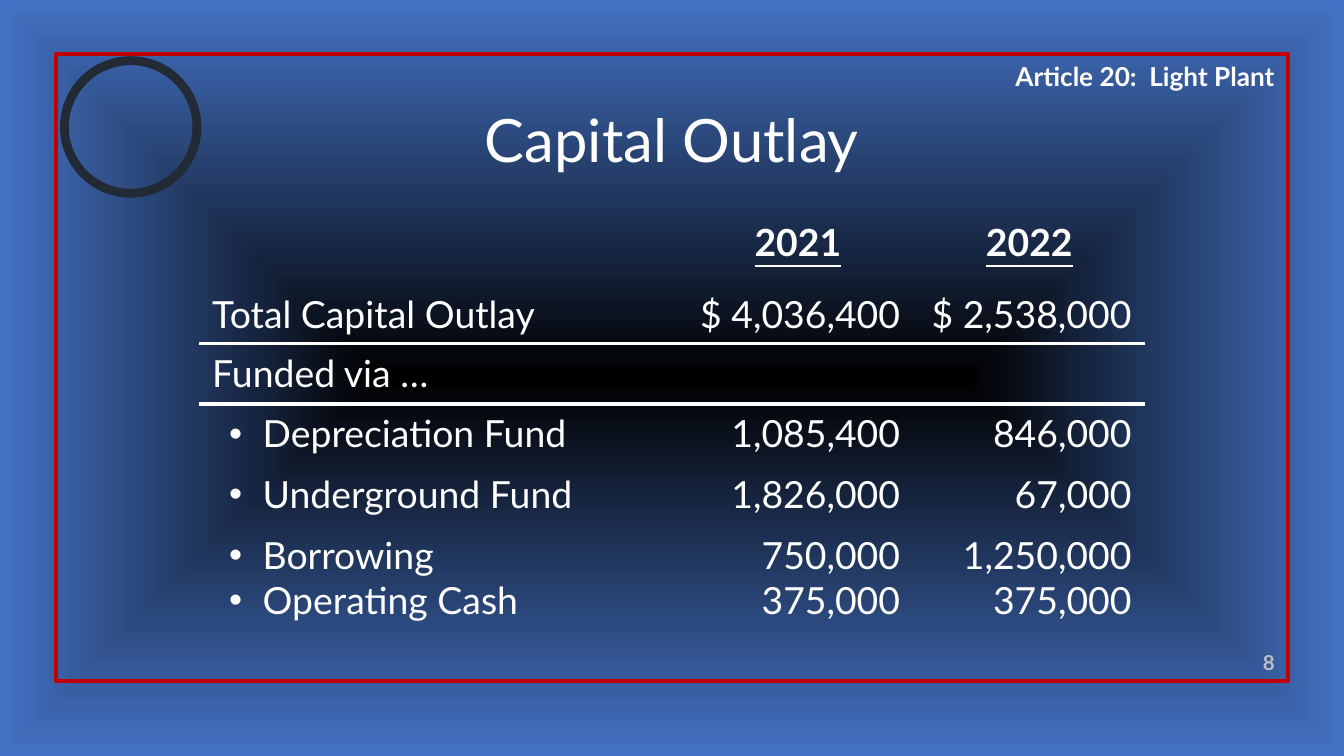
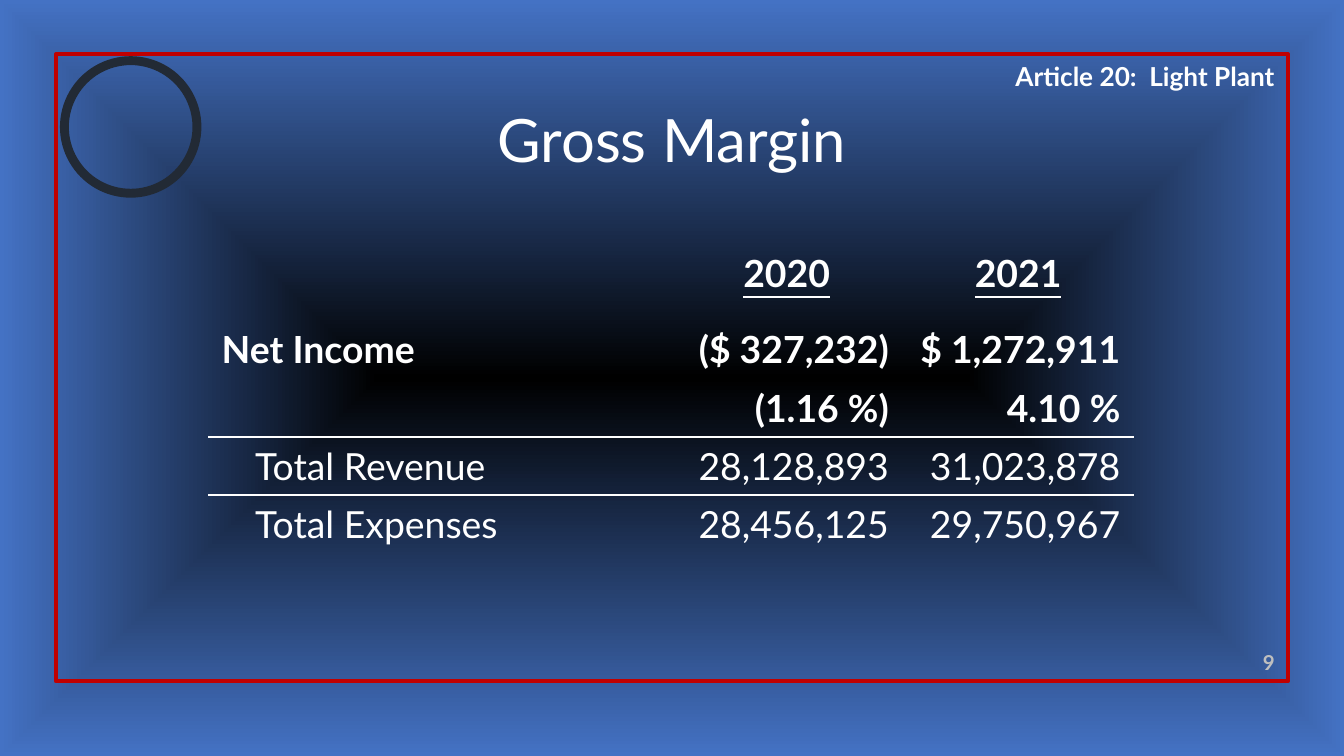
from lxml import etree
from pptx import Presentation
from pptx.dml.color import RGBColor
from pptx.enum.shapes import MSO_SHAPE
from pptx.enum.text import MSO_ANCHOR, MSO_AUTO_SIZE, PP_ALIGN
from pptx.oxml import parse_xml
from pptx.oxml.ns import qn
from pptx.util import Pt

LEFT, MID, RIGHT = PP_ALIGN.LEFT, PP_ALIGN.CENTER, PP_ALIGN.RIGHT
TOP, CENTRE, BOTTOM = MSO_ANCHOR.TOP, MSO_ANCHOR.MIDDLE, MSO_ANCHOR.BOTTOM
RECT, OVAL = MSO_SHAPE.RECTANGLE, MSO_SHAPE.OVAL
GROW = MSO_AUTO_SIZE.SHAPE_TO_FIT_TEXT
FONT = "Lato"
NS = "http://schemas.openxmlformats.org/drawingml/2006/main"
NO_GRID = "{2D5ABB26-0587-4C30-8999-92F81FD0307C}"
COLORS = {
    "white": "FFFFFF", "red": "C00000", "ring": "222A35", "grey": "BFBFBF",
    "black": "000000", "blue": "4472C4", "slate": "44546A",
}

PAGES = [
    {
        "title": "Capital Outlay", "page": 8,
        "at": (106.5, 114), "cols": (259, 124, 124),
        "rows": (32.5, 37.5, 32.5, 32.5, 32.5, 57),
        "bold": (0,), "rule": 1, "width": 2.25,
        "indent": 27, "hang": -18, "bullet": "•",
        "cells": [
            ("", "2021", "2022"),
            ("Total Capital Outlay", "$ 4,036,400", "$ 2,538,000"),
            ("Funded via …", "", ""),
            ("Depreciation Fund", "1,085,400", "846,000"),
            ("Underground Fund", "1,826,000", "67,000"),
            ("Borrowing\nOperating Cash", "750,000\n375,000", "1,250,000\n375,000"),
        ],
    },
    {
        "title": "Gross Margin", "page": 9,
        "at": (111.5, 130.5), "cols": (248, 124, 124),
        "rows": (29.5, 41, 29.5, 29.5, 29.5),
        "bold": (0, 1, 2), "rule": 2, "width": 1,
        "indent": 18, "hang": 0, "bullet": "",
        "cells": [
            ("", "2020", "2021"),
            ("Net Income", "($ 327,232)", "$ 1,272,911"),
            ("", "(1.16 %)", "4.10 %"),
            ("Total Revenue", "28,128,893", "31,023,878"),
            ("Total Expenses", "28,456,125", "29,750,967"),
        ],
    },
]


def write(frame, text, size=20, color="white", bold=False, under=False,
          align=LEFT, indent=0, hang=0, bullet=""):
    """Fill a text frame, one paragraph for each line of text."""
    for i, line in enumerate(text.split("\n")):
        para = frame.paragraphs[0] if i == 0 else frame.add_paragraph()
        para.alignment = align
        if indent:
            props = para._p.get_or_add_pPr()
            props.set("marL", str(Pt(indent)))
            props.set("indent", str(Pt(hang)))
            if bullet:
                etree.SubElement(props, qn("a:buFont")).set("typeface", "Arial")
                etree.SubElement(props, qn("a:buChar")).set("char", bullet)
        run = para.add_run()
        run.text = line
        font = run.font
        font.name, font.size = FONT, Pt(size)
        font.bold, font.underline = bold, under
        font.color.rgb = RGBColor.from_string(COLORS[color])


def border(cell, side, width):
    props = cell._tc.get_or_add_tcPr()
    props.insert(0, parse_xml(
        f'<a:{side} xmlns:a="{NS}" w="{Pt(width)}"><a:solidFill>'
        f'<a:srgbClr val="{COLORS["white"]}"/></a:solidFill></a:{side}>'))


deck = Presentation()
deck.slide_width, deck.slide_height = Pt(720), Pt(405)

# Shared background
master = deck.slide_master
master.background.fill.gradient()
old = master.element.find(".//" + qn("p:bgPr")).find(qn("a:gradFill"))
stops = "".join(
    f'<a:gs pos="{pos}"><a:srgbClr val="{COLORS[name]}"/></a:gs>'
    for pos, name in ((0, "black"), (100000, "blue"), (100000, "slate")))
old.getparent().replace(old, parse_xml(
    f'<a:gradFill xmlns:a="{NS}" rotWithShape="1"><a:gsLst>{stops}</a:gsLst>'
    '<a:path path="shape"><a:fillToRect l="50000" t="50000" r="50000" b="50000"/>'
    '</a:path></a:gradFill>'))

for page in PAGES:
    slide = deck.slides.add_slide(deck.slide_layouts[5])
    shapes = slide.shapes

    # Frame and ring
    for kind, box, color, width in (
            (RECT, (30, 29, 660, 336), "red", 2.25),
            (OVAL, (34.5, 32.5, 71, 71), "ring", 4.75)):
        shape = shapes.add_shape(kind, *map(Pt, box))
        shape.shadow.inherit = False
        shape.fill.background()
        shape.line.color.rgb = RGBColor.from_string(COLORS[color])
        shape.line.width = Pt(width)

    # Article label and page number
    label = shapes.add_textbox(Pt(498), Pt(29), Pt(192), Pt(24)).text_frame
    label.word_wrap, label.auto_size = True, GROW
    write(label, "Article 20:  Light Plant", size=14, bold=True, align=RIGHT)
    number = shapes.add_textbox(Pt(648), Pt(348), Pt(42), Pt(17)).text_frame
    number.word_wrap, number.vertical_anchor = True, BOTTOM
    write(number, str(page["page"]), size=11, color="grey", bold=True, align=RIGHT)

    title = shapes.title
    title.left, title.top, title.width, title.height = map(Pt, (36, 47, 648, 54))
    title.text_frame.vertical_anchor = CENTRE
    write(title.text_frame, page["title"], size=32, align=MID)

    # Table
    cols, rows, rule = page["cols"], page["rows"], page["rule"]
    box = (*page["at"], sum(cols), sum(rows))
    table = shapes.add_table(len(rows), len(cols), *map(Pt, box)).table
    table.first_row = table.horz_banding = False
    table._tbl.tblPr.find(qn("a:tableStyleId")).text = NO_GRID
    for col, width in zip(table.columns, cols):
        col.width = Pt(width)
    for r, texts in enumerate(page["cells"]):
        table.rows[r].height = Pt(rows[r])
        for c, text in enumerate(texts):
            cell = table.cell(r, c)
            cell.fill.background()
            cell.vertical_anchor = BOTTOM if r == 1 else TOP
            if r == rule:
                border(cell, "lnB", page["width"])
            elif r == rule + 1:
                border(cell, "lnT", page["width"])
            if not text:
                continue
            look = {"bold": r in page["bold"], "under": r == 0}
            if c:
                look["align"] = RIGHT if r else MID
            elif r > 2:
                look.update({key: page[key] for key in ("indent", "hang", "bullet")})
            write(cell.text_frame, text, **look)

deck.save("out.pptx")
